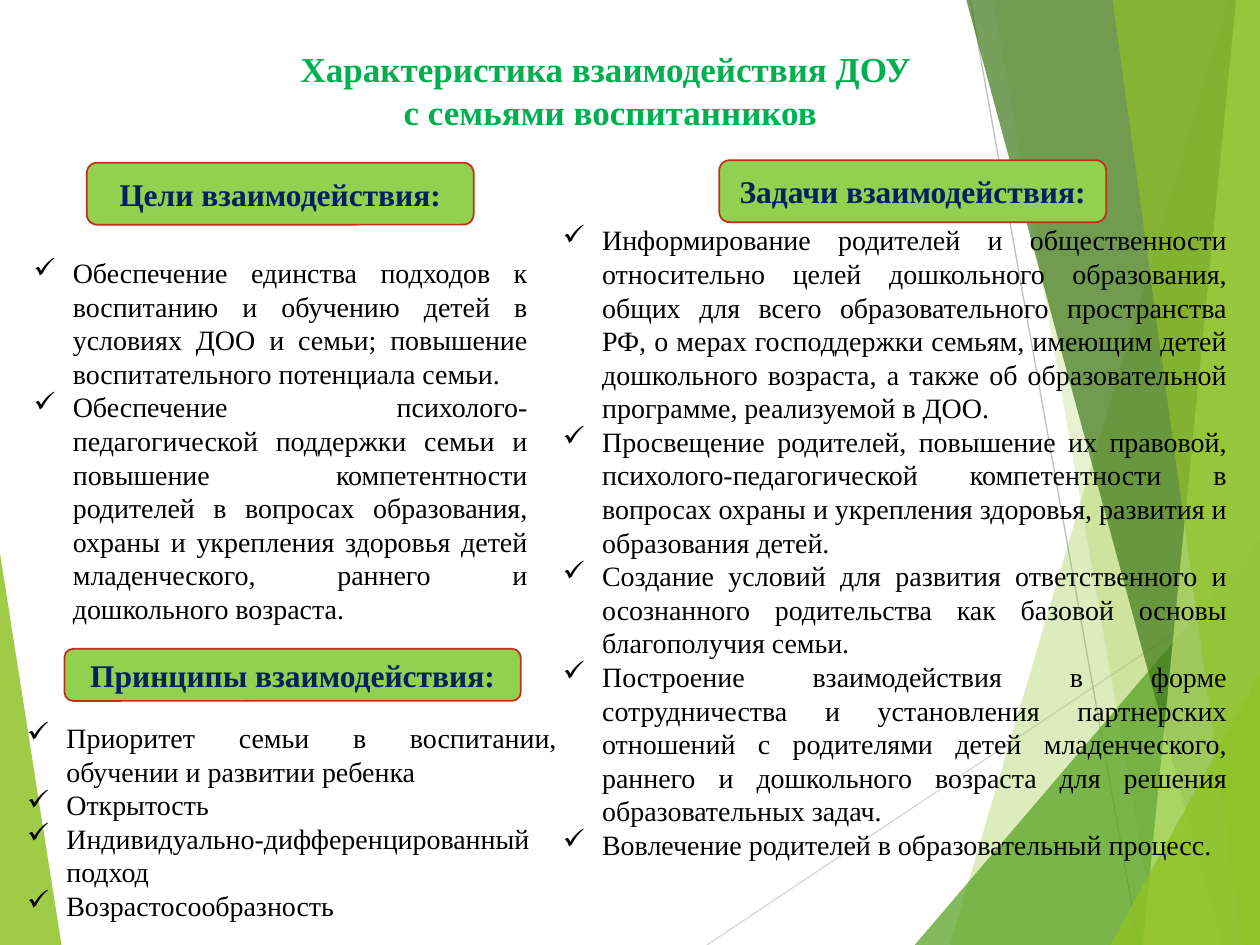
import pptx
import pptx.util
import pptx.dml.color
import pptx.enum.shapes
import pptx.enum.text
import pptx.oxml
import pptx.oxml.ns
import lxml.etree

Cm, Pt = pptx.util.Cm, pptx.util.Pt
ALIGN = pptx.enum.text.PP_ALIGN
ANCHOR = pptx.enum.text.MSO_ANCHOR
FONT = "Times New Roman"
WIDE, HIGH = 25.4, 19.05
COLORS = {
    "title": "00B050", "label": "92D050", "edge": "C42F1A",
    "navy": "002060", "text": "000000",
    "lime": "90C226", "green": "54A021", "dark": "3F7819", "pale": "C0E474",
    "gray": "BFBFBF", "light": "D9D9D9",
}


def rgb(name):
    return pptx.dml.color.RGBColor.from_string(COLORS[name])


def add_tag(parent, tag, **attrs):
    node = lxml.etree.SubElement(parent, pptx.oxml.ns.qn(tag))
    for key, value in attrs.items():
        node.set(key, str(value))
    return node


class Deck:
    def __init__(self):
        self.prs = pptx.Presentation()
        self.prs.slide_width, self.prs.slide_height = Cm(WIDE), Cm(HIGH)
        self.slide = self.prs.slides.add_slide(self.prs.slide_layouts[5])
        self.shapes = self.slide.shapes

    def put_text(self, frame, lines, size, color, align, bold=False):
        frame.word_wrap = True
        frame.text = "\n".join(lines)
        for para in frame.paragraphs:
            para.alignment = align
            font = para.font
            font.name, font.size, font.bold = FONT, Pt(size), bold
            font.color.rgb = rgb(color)

    def title(self, lines, *box):
        shape = self.shapes.title
        shape.left, shape.top, shape.width, shape.height = map(Cm, box)
        frame = shape.text_frame
        self.put_text(frame, lines, 20, "title", ALIGN.CENTER, True)
        frame.auto_size = pptx.enum.text.MSO_AUTO_SIZE.NONE
        frame.vertical_anchor = ANCHOR.TOP

    def facet(self, color, alpha, points):
        # Hundredths of a centimetre keep the outline precise
        dots = [(round(x * 100), round(y * 100)) for x, y in points]
        pen = self.shapes.build_freeform(*dots[0], scale=Cm(0.01))
        pen.add_line_segments(dots[1:], close=True)
        shape = pen.convert_to_shape()
        shape.shadow.inherit = False
        shape.line.fill.background()
        shape.fill.solid()
        shape.fill.fore_color.rgb = rgb(color)
        fill = shape._element.spPr.find(pptx.oxml.ns.qn("a:solidFill"))
        add_tag(fill[0], "a:alpha", val=alpha * 1000)

    def line(self, color, *ends):
        kind = pptx.enum.shapes.MSO_CONNECTOR.STRAIGHT
        line = self.shapes.add_connector(kind, *map(Cm, ends))
        line.line.color.rgb = rgb(color)
        line.line.width = Pt(0.75)
        add_tag(line._element.spPr, "a:effectLst")

    def label(self, text, *box):
        kind = pptx.enum.shapes.MSO_SHAPE.ROUNDED_RECTANGLE
        shape = self.shapes.add_shape(kind, *map(Cm, box))
        shape.shadow.inherit = False
        shape.fill.solid()
        shape.fill.fore_color.rgb = rgb("label")
        shape.line.color.rgb = rgb("edge")
        shape.line.width = Pt(1)
        shape.text_frame.vertical_anchor = ANCHOR.MIDDLE
        self.put_text(shape.text_frame, [text], 18, "navy", ALIGN.CENTER, True)

    def checks(self, lines, *box):
        frame = self.shapes.add_textbox(*map(Cm, box)).text_frame
        self.put_text(frame, lines, 16, "text", ALIGN.JUSTIFY)
        for para in frame.paragraphs:
            props = para._p.get_or_add_pPr()
            props.set("marL", str(Cm(0.79)))
            props.set("indent", str(-Cm(0.79)))
            mark = pptx.oxml.parse_xml(
                f'<a:buChar {pptx.oxml.ns.nsdecls("a")} char="✓"/>')
            props.insert(0, mark)


def main():
    deck = Deck()

    # Backdrop: lines and see-through facets along the edges
    deck.facet("lime", 85, [(0, 11.15), (1.24, HIGH), (0, HIGH)])
    deck.line("light", 14.25, HIGH, WIDE, 11.61)
    deck.line("gray", 19.56, 0, 22.96, HIGH)
    # Each facet: colour, opacity, x at the bottom, x and y of its top
    for color, alpha, foot, x, y in [
        ("lime", 30, 19.15, 24.77, 0),
        ("lime", 20, 23.34, 20.02, 0),
        ("green", 72, 18.44, WIDE, 10.9),
        ("dark", 70, 24.64, 19.48, 0),
        ("pale", 70, 23.04, 24.92, 0),
        ("lime", 65, 25.04, 22.43, 0),
        ("lime", 80, 22.38, WIDE, 13.59),
    ]:
        deck.facet(color, alpha, [(x, y), (foot, HIGH), (WIDE, HIGH), (WIDE, y)])

    # Title
    deck.title(["Характеристика взаимодействия ДОУ ",
                "с семьями воспитанников"], 2.31, 0.84, 19.99, 1.96)

    # Headings
    deck.label("Цели взаимодействия:", 1.75, 3.28, 7.8, 1.25)
    deck.label("Задачи взаимодействия:", 14.5, 3.23, 7.8, 1.25)
    deck.label("Принципы взаимодействия:", 1.3, 13.08, 9.2, 1.05)

    # Principles
    deck.checks([
        "Приоритет семьи в воспитании, обучении и развитии ребенка",
        "Открытость",
        "Индивидуально-дифференцированный подход",
        "Возрастосообразность",
    ], 0.3, 14.4, 11.18, 4.37)

    # Goals
    deck.checks([
        "Обеспечение единства подходов к воспитанию и обучению детей в "
        "условиях ДОО и семьи; повышение воспитательного потенциала семьи.",
        "Обеспечение психолого-педагогической поддержки семьи и повышение "
        "компетентности родителей в вопросах образования, охраны и "
        "укрепления здоровья детей младенческого, раннего и дошкольного "
        "возраста.",
    ], 0.43, 5.03, 10.46, 7.77)

    # Tasks
    deck.checks([
        "Информирование родителей и общественности относительно целей "
        "дошкольного образования, общих для всего образовательного "
        "пространства РФ, о мерах господдержки семьям, имеющим детей "
        "дошкольного возраста, а также об образовательной программе, "
        "реализуемой в ДОО.",
        "Просвещение родителей, повышение их правовой, "
        "психолого-педагогической компетентности в вопросах охраны и "
        "укрепления здоровья, развития и образования детей.",
        "Создание условий для развития ответственного и осознанного "
        "родительства как базовой основы благополучия семьи.",
        "Построение взаимодействия в форме сотрудничества и установления "
        "партнерских отношений с родителями детей младенческого, раннего и "
        "дошкольного возраста для решения образовательных задач.",
        "Вовлечение родителей в образовательный процесс.",
    ], 11.1, 4.37, 13.89, 13.26)

    deck.prs.save("out.pptx")


if __name__ == "__main__":
    main()
